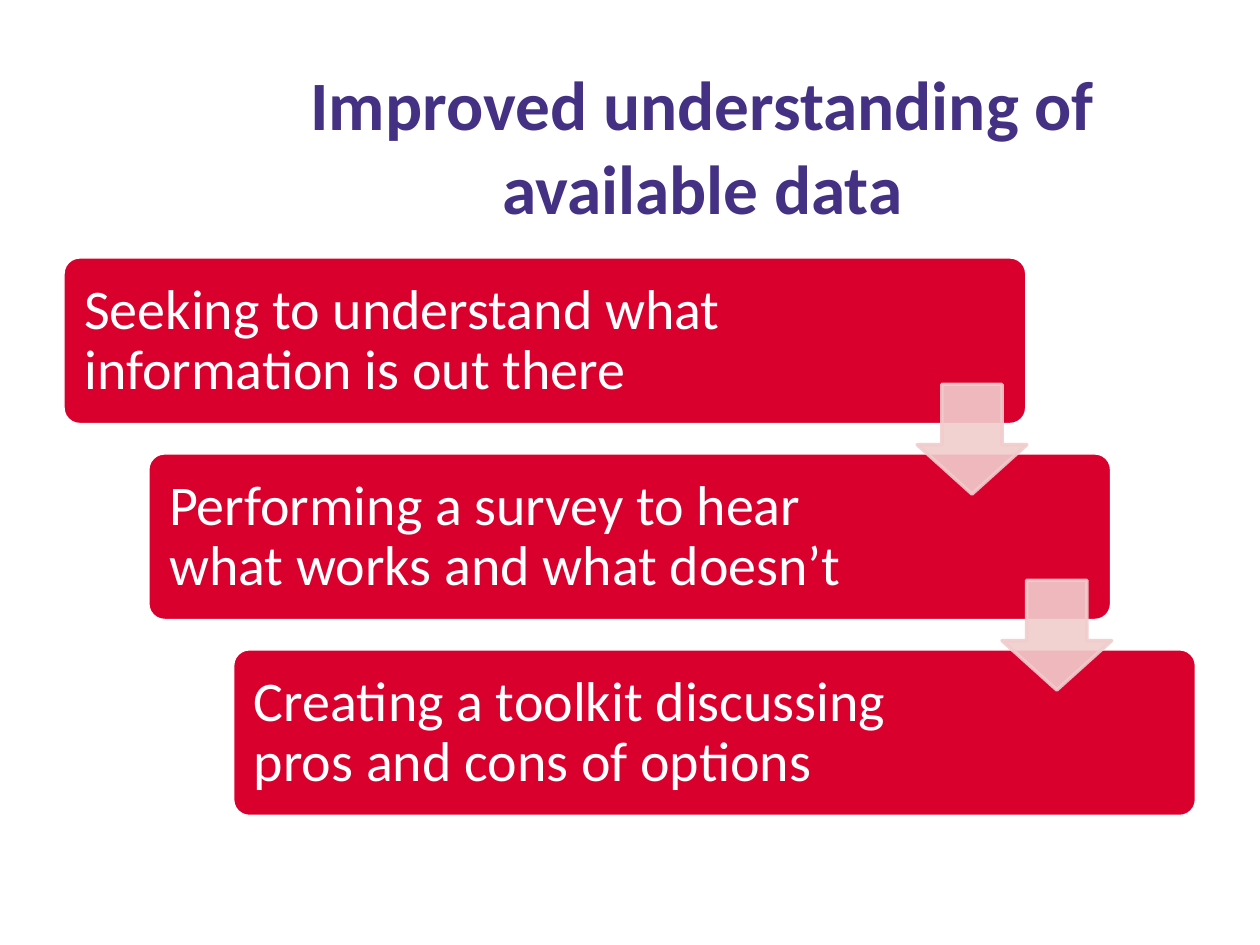
from lxml.etree import SubElement
from pptx import Presentation
from pptx.dml.color import RGBColor
from pptx.enum.shapes import MSO_SHAPE
from pptx.enum.text import MSO_ANCHOR, PP_ALIGN
from pptx.oxml.ns import qn
from pptx.util import Cm, Pt


def color(hex_value):
    return RGBColor.from_string(hex_value)


def add_text(left, top, width, height, text, size, hex_value):
    shape = slide.shapes.add_textbox(Cm(left), Cm(top), Cm(width), Cm(height))
    text_frame = shape.text_frame
    text_frame.word_wrap = True
    text_frame.vertical_anchor = MSO_ANCHOR.MIDDLE
    text_frame.text = text
    font = text_frame.paragraphs[0].runs[0].font
    font.name = "Calibri"
    font.size = Pt(size)
    font.color.rgb = color(hex_value)
    return text_frame


presentation = Presentation()
presentation.slide_width = Cm(25.4)
presentation.slide_height = Cm(19.05)
slide = presentation.slides.add_slide(presentation.slide_layouts[6])

title = add_text(4.19, 2.18, 19.94, 3.18,
                 "Improved understanding of available data", 39.6, "443183")
title.margin_bottom = Cm(1.83)
title.paragraphs[0].alignment = PP_ALIGN.CENTER
title.paragraphs[0].runs[0].font.bold = True

steps = [
    ("Seeking to understand what information is out there", 15.77),
    ("Performing a survey to hear what works and what doesn’t", 15.32),
    ("Creating a toolkit discussing pros and cons of options", 15.32),
]
step_right, step_down = 1.71, 3.95

for index, (text, text_width) in enumerate(steps):
    left = 1.27 + index * step_right
    top = 5.18 + index * step_down
    box = slide.shapes.add_shape(MSO_SHAPE.ROUNDED_RECTANGLE,
                                 Cm(left), Cm(top), Cm(19.43), Cm(3.38))
    box.adjustments[0] = 0.1
    box.shadow.inherit = False
    box.fill.solid()
    box.fill.fore_color.rgb = color("D9002E")
    box.line.color.rgb = color("FFFFFF")
    box.line.width = Pt(2)

    label = add_text(left + 0.1, top + 0.1, text_width, 3.2, text, 32, "FFFFFF")
    label.margin_left = label.margin_right = Cm(0.33)
    label.margin_top = label.margin_bottom = Cm(0.33)
    label.paragraphs[0].line_spacing = 0.9

for index in range(len(steps) - 1):
    arrow = slide.shapes.add_shape(MSO_SHAPE.DOWN_ARROW,
                                   Cm(18.49 + index * step_right),
                                   Cm(7.75 + index * step_down),
                                   Cm(2.21), Cm(2.21))
    arrow.adjustments[0] = 0.55
    arrow.adjustments[1] = 0.45
    arrow.shadow.inherit = False
    arrow.fill.solid()
    arrow.fill.fore_color.rgb = color("F1CCCD")
    arrow.line.color.rgb = color("F1CCCD")
    arrow.line.width = Pt(2)
    for color_element in arrow.element.spPr.iter(qn("a:srgbClr")):
        SubElement(color_element, qn("a:alpha")).set("val", "90000")

presentation.save("out.pptx")
